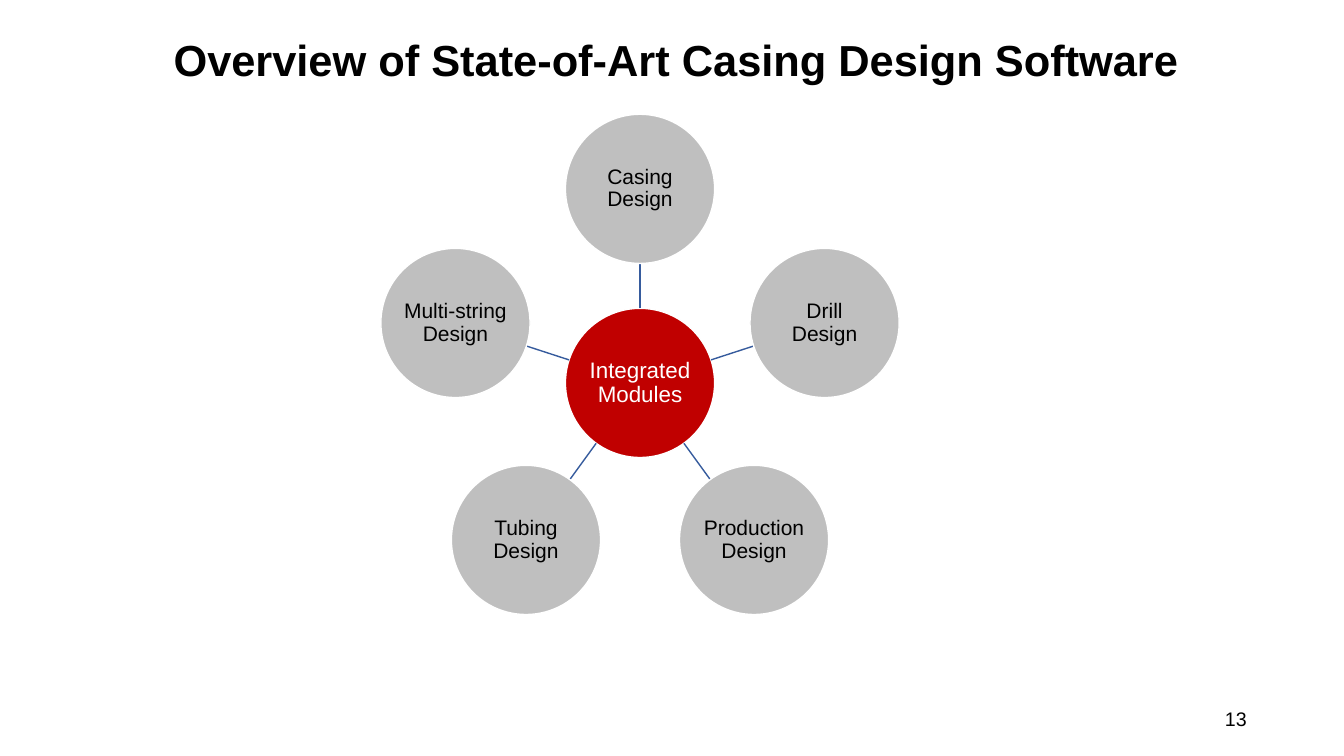
from math import cos, radians, sin

from lxml import etree
from pptx import Presentation
from pptx.dml.color import RGBColor
from pptx.enum.shapes import MSO_CONNECTOR, MSO_SHAPE
from pptx.enum.text import MSO_ANCHOR, MSO_AUTO_SIZE, PP_ALIGN
from pptx.oxml.ns import qn
from pptx.util import Cm, Pt

OVAL = MSO_SHAPE.OVAL
STRAIGHT = MSO_CONNECTOR.STRAIGHT
MIDDLE = MSO_ANCHOR.MIDDLE
LEFT, CENTER, RIGHT = PP_ALIGN.LEFT, PP_ALIGN.CENTER, PP_ALIGN.RIGHT

COLORS = {"black": "000000", "white": "FFFFFF", "hub": "C00000",
          "module": "BFBFBF", "spoke": "365B9D"}
MODULES = ["Casing Design", "Drill Design", "Production Design",
           "Tubing Design", "Multi-string Design"]

# Geometry of the wheel, in centimetres
HUB_X, HUB_Y = 16.13, 9.65
DIAMETER = 3.76
RING_RADIUS = 4.89


def write(shape, text, size, color, align, bold=False):
    frame = shape.text_frame
    frame.text = text
    frame.word_wrap = True
    frame.auto_size = MSO_AUTO_SIZE.NONE
    frame.vertical_anchor = MIDDLE
    paragraph = frame.paragraphs[0]
    paragraph.alignment = align
    paragraph.line_spacing = 0.9
    font = paragraph.runs[0].font
    font.name, font.size, font.bold = "Arial", Pt(size), bold
    font.color.rgb = RGBColor.from_string(COLORS[color])


def add_circle(x, y, text, size, fill, color):
    circle = slide.shapes.add_shape(OVAL, Cm(x - DIAMETER / 2), Cm(y - DIAMETER / 2),
                                    Cm(DIAMETER), Cm(DIAMETER))
    circle.shadow.inherit = False
    circle.fill.solid()
    circle.fill.fore_color.rgb = RGBColor.from_string(COLORS[fill])
    circle.line.color.rgb = RGBColor.from_string(COLORS["white"])
    circle.line.width = Pt(1)
    frame = circle.text_frame
    frame.margin_left = frame.margin_right = Cm(0.03)
    frame.margin_top = frame.margin_bottom = Cm(0.03)
    write(circle, text, size, color, CENTER)


prs = Presentation()
prs.slide_width, prs.slide_height = Cm(33.87), Cm(19.05)
slide = prs.slides.add_slide(prs.slide_layouts[5])

# Title
title = slide.shapes.title
title.left, title.top, title.width, title.height = Cm(4.12), Cm(0.38), Cm(26.7), Cm(2.41)
write(title, "Overview of State-of-Art Casing Design Software", 31, "black", LEFT, bold=True)

# Hub
add_circle(HUB_X, HUB_Y, "Integrated Modules", 16, "hub", "white")

# Spokes and modules, clockwise from the top
spoke_start, spoke_end = DIAMETER / 2, RING_RADIUS - DIAMETER / 2
for index, module in enumerate(MODULES):
    angle = radians(index * 360 / len(MODULES) - 90)
    dx, dy = cos(angle), sin(angle)
    spoke = slide.shapes.add_connector(
        STRAIGHT,
        Cm(HUB_X + spoke_start * dx), Cm(HUB_Y + spoke_start * dy),
        Cm(HUB_X + spoke_end * dx), Cm(HUB_Y + spoke_end * dy))
    spoke.line.color.rgb = RGBColor.from_string(COLORS["spoke"])
    spoke.line.width = Pt(1)
    etree.SubElement(spoke._element.spPr, qn("a:effectLst"))
    add_circle(HUB_X + RING_RADIUS * dx, HUB_Y + RING_RADIUS * dy,
               module, 15, "module", "black")

# Page number
page_number = slide.shapes.add_textbox(Cm(24.05), Cm(17.65), Cm(7.62), Cm(1.02))
write(page_number, "13", 14, "black", RIGHT)

prs.save("out.pptx")
